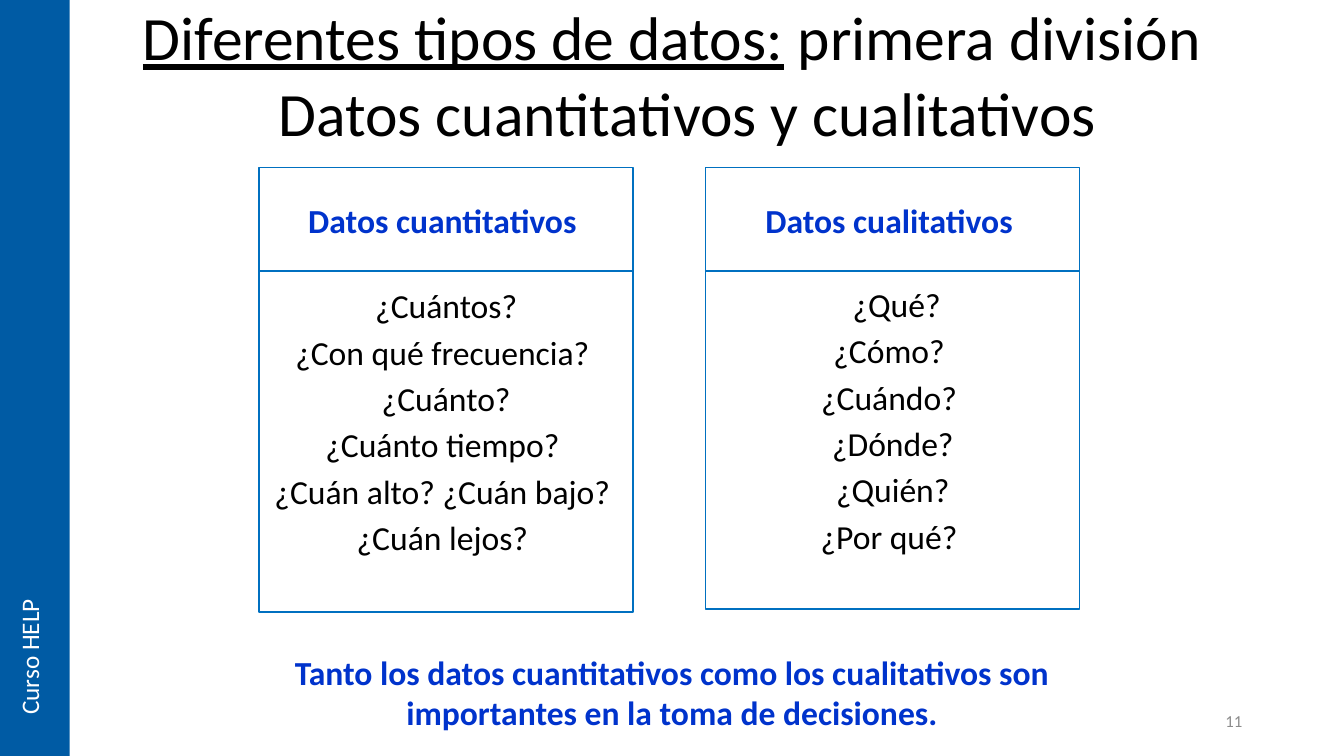
"""Build the slide that compares quantitative and qualitative data."""
from pptx import Presentation
from pptx.dml.color import RGBColor
from pptx.enum.shapes import MSO_SHAPE
from pptx.enum.text import MSO_ANCHOR, PP_ALIGN
from pptx.util import Inches, Pt

RECT = MSO_SHAPE.RECTANGLE
TOP, MIDDLE = MSO_ANCHOR.TOP, MSO_ANCHOR.MIDDLE
LEFT, CENTER, RIGHT = PP_ALIGN.LEFT, PP_ALIGN.CENTER, PP_ALIGN.RIGHT

HEADING = ("Diferentes tipos de datos:", " primera división")
SUBHEADING = "Datos cuantitativos y cualitativos"
CARDS = [
    ("Datos cuantitativos ", 3.38,
     ["¿Cuántos?", "¿Con qué frecuencia? ", "¿Cuánto?", "¿Cuánto tiempo? ",
      "¿Cuán alto? ¿Cuán bajo? ", "¿Cuán lejos? "]),
    ("Datos cualitativos ", 3.35,
     [" ¿Qué?", "¿Cómo? ", "¿Cuándo? ", "¿Dónde?", "¿Quién?", "¿Por qué? "]),
]
CONCLUSION = ("Tanto los datos cuantitativos como los cualitativos son "
              "importantes en la toma de decisiones.")
COURSE = "Curso HELP"
PAGE = "11"

COLORS = {"black": "000000", "white": "FFFFFF", "accent": "0033CC",
          "border": "0070C0", "band": "005BA4", "page": "8C8C8C"}
FONT = "Calibri"
SLIDE_W, SLIDE_H = 13.33, 7.5
BAND_W = 0.69
CARD_LEFT, CARD_STEP, CARD_W = 2.57, 4.43, 3.71
HEADER_TOP, HEADER_H = 1.66, 1.04
QUESTIONS_TOP = 2.69


def color(name):
    return RGBColor.from_string(COLORS[name])


def add_box(slide, area, fill=None, border=None):
    lengths = [Inches(length) for length in area]
    if fill is None:
        return slide.shapes.add_textbox(*lengths)
    box = slide.shapes.add_shape(RECT, *lengths)
    box.shadow.inherit = False
    box.fill.solid()
    box.fill.fore_color.rgb = color(fill)
    if border:
        box.line.color.rgb = color(border)
        box.line.width = Pt(1)
    else:
        box.line.fill.background()
    return box


def write(box, lines, size, ink, bold=False, align=CENTER, anchor=MIDDLE,
          wrap=True, gap=0):
    frame = box.text_frame
    frame.word_wrap = wrap
    frame.vertical_anchor = anchor
    for index, line in enumerate(lines):
        paragraph = frame.add_paragraph() if index else frame.paragraphs[0]
        paragraph.text = line
        paragraph.alignment = align
        if index and gap:
            paragraph.space_before = Pt(gap)
        paragraph.font.name = FONT
        paragraph.font.size = Pt(size)
        paragraph.font.bold = bold
        paragraph.font.color.rgb = color(ink)
    return frame


def add_card(slide, column, title, height, questions):
    left = CARD_LEFT + column * CARD_STEP
    header = add_box(slide, (left, HEADER_TOP, CARD_W, HEADER_H), "white", "border")
    write(header, [title], 24, "accent", bold=True)
    body = add_box(slide, (left, QUESTIONS_TOP, CARD_W, height), "white", "border")
    frame = write(body, questions, 24, "black", anchor=TOP, gap=4.3)
    frame.margin_top = Inches((height - 3.1) / 2)


def main():
    deck = Presentation()
    deck.slide_width, deck.slide_height = Inches(SLIDE_W), Inches(SLIDE_H)
    slide = deck.slides.add_slide(deck.slide_layouts[6])

    subheading = add_box(slide, (CARD_LEFT, 0.81, 8.5, 0.69))
    frame = write(subheading, [SUBHEADING], 44, "black")
    frame.paragraphs[0].line_spacing = 0.9

    conclusion = add_box(slide, (2.76, 6.41, 7.81, 0.91))
    write(conclusion, [CONCLUSION], 24, "accent", bold=True)
    page = add_box(slide, (9.42, 6.95, 3, 0.4))
    write(page, [PAGE], 12, "page", align=RIGHT)

    add_box(slide, (0, 0, BAND_W, SLIDE_H), "band")
    course = add_box(slide, (0.09, 5.61, 0.5, 1.58))
    frame = write(course, [COURSE], 18, "white", align=LEFT, anchor=TOP, wrap=False)
    frame._txBody.bodyPr.set("vert", "vert270")

    for column, card in enumerate(CARDS):
        add_card(slide, column, *card)

    heading = add_box(slide, (1.26, -0.06, 10.81, 0.84))
    topic, rest = HEADING
    frame = write(heading, [topic], 44, "black", anchor=TOP, wrap=False)
    frame.paragraphs[0].runs[0].font.underline = True
    frame.paragraphs[0].add_run().text = rest

    deck.save("out.pptx")


if __name__ == "__main__":
    main()
